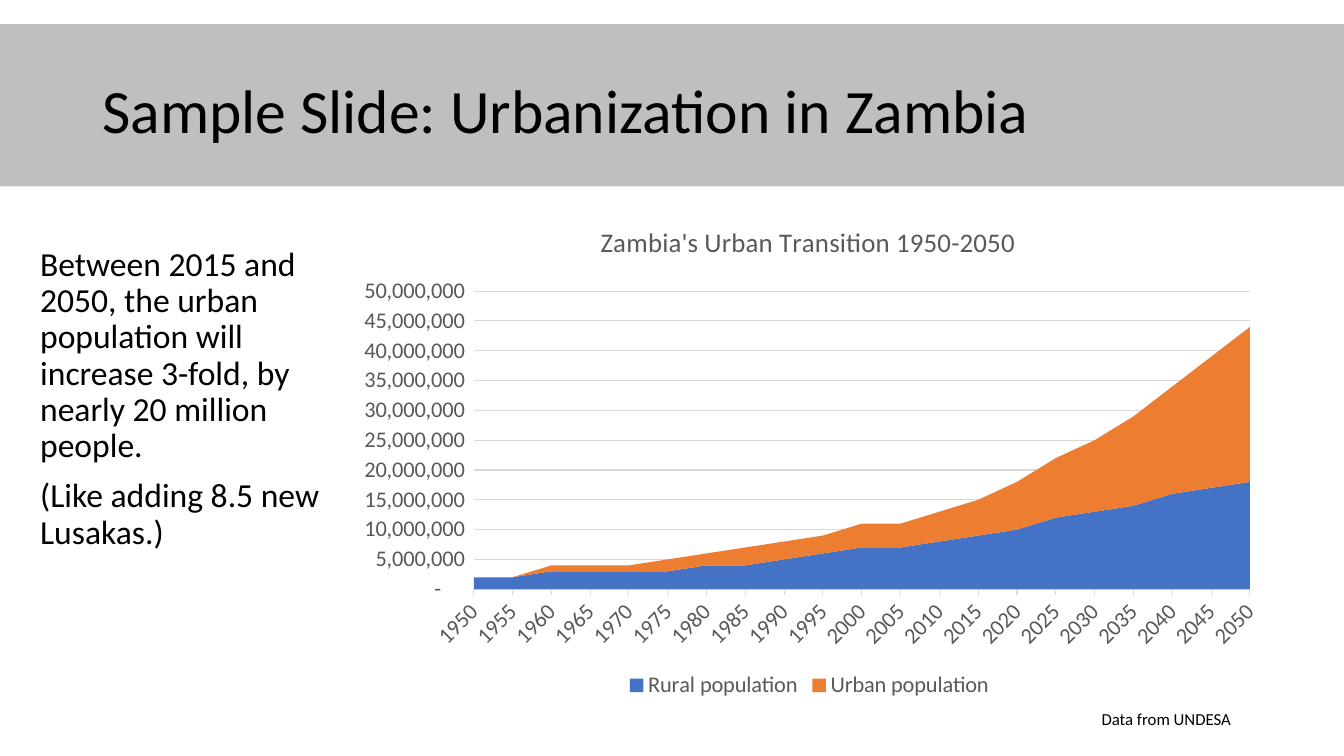
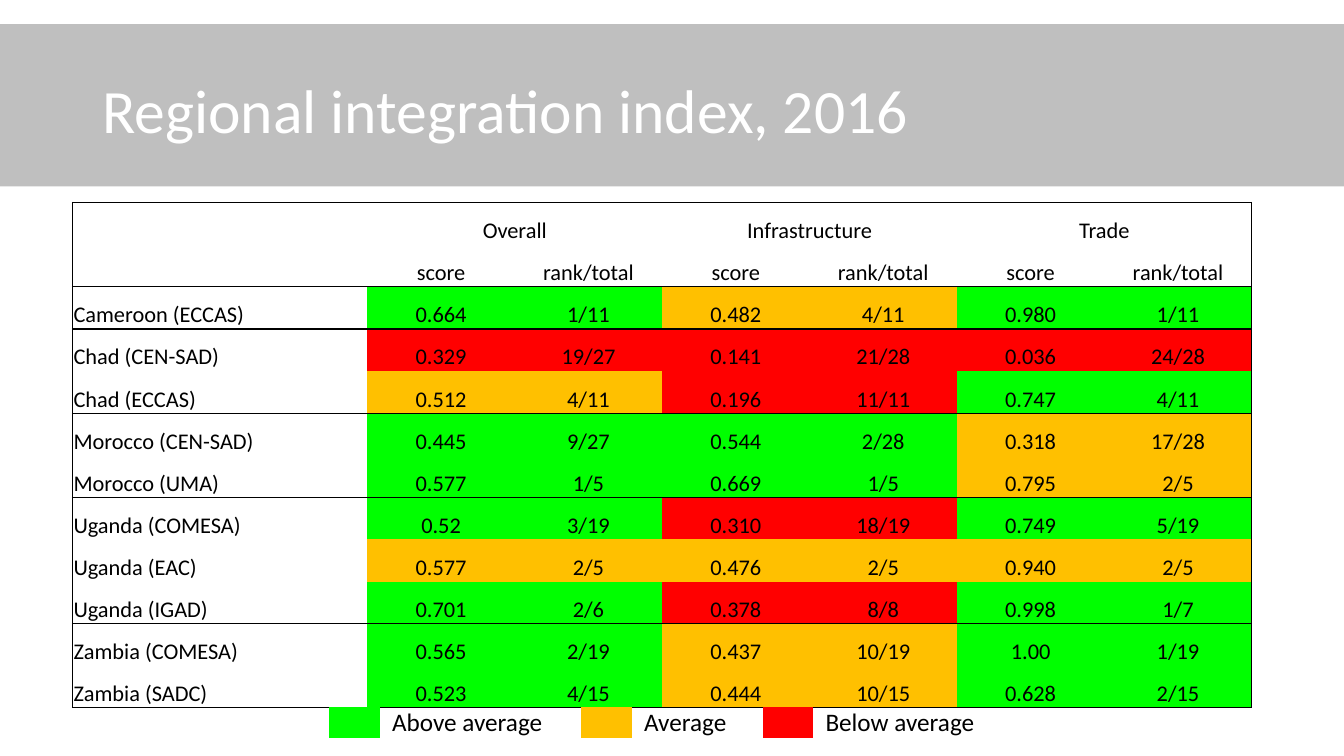
import pptx
import pptx.chart.data
import pptx.dml.color
import pptx.enum.chart
import pptx.enum.shapes
import pptx.enum.text
import pptx.oxml
import pptx.oxml.ns
import pptx.util

Pt = pptx.util.Pt
FONT = "Calibri"
COLORS = {
    "text": "000000", "white": "FFFFFF", "band": "BFBFBF",
    "axis": "595959", "grid": "D9D9D9",
    "rural": "4472C4", "urban": "ED7D31",
    "above": "00FF00", "average": "FFC000", "below": "FF0000",
}
SLIDE = (960, 540)
BAND = (0, 17.28, 960, 115.92)
TITLE = (66, 28.8, 828, 104.4)
ALIGN = pptx.enum.text.PP_ALIGN
ANCHOR = pptx.enum.text.MSO_ANCHOR

YEARS = [str(year) for year in range(1950, 2051, 5)]
MILLIONS = {
    "rural": [2, 2, 3, 3, 3, 3, 4, 4, 5, 6, 7, 7, 8, 9, 10, 12, 13, 14, 16, 17, 18],
    "urban": [0, 0, 1, 1, 1, 2, 2, 3, 3, 3, 4, 4, 5, 6, 8, 10, 12, 15, 18, 22, 26],
}
RATINGS = {"G": "above", "A": "average", "R": "below"}
GROUP_STARTS = (0, 2, 3, 5, 7, 10, 12)
SCORES = [
    ("Cameroon (ECCAS)", "0.664 1/11 0.482 4/11 0.980 1/11", "GAG"),
    ("Chad (CEN-SAD)", "0.329 19/27 0.141 21/28 0.036 24/28", "RRR"),
    ("Chad (ECCAS)", "0.512 4/11 0.196 11/11 0.747 4/11", "ARG"),
    ("Morocco (CEN-SAD)", "0.445 9/27 0.544 2/28 0.318 17/28", "GGA"),
    ("Morocco (UMA)", "0.577 1/5 0.669 1/5 0.795 2/5", "GGA"),
    ("Uganda (COMESA)", "0.52 3/19 0.310 18/19 0.749 5/19", "GRG"),
    ("Uganda (EAC)", "0.577 2/5 0.476 2/5 0.940 2/5", "AAA"),
    ("Uganda (IGAD)", "0.701 2/6 0.378 8/8 0.998 1/7", "GRG"),
    ("Zambia (COMESA)", "0.565 2/19 0.437 10/19 1.00 1/19", "GAG"),
    ("Zambia (SADC)", "0.523 4/15 0.444 10/15 0.628 2/15", "GAG"),
]


def rgb(name):
    """Return the named colour."""
    return pptx.dml.color.RGBColor.from_string(COLORS[name])


def points(box):
    """Turn a box of numbers into lengths."""
    return [Pt(v) for v in box]


def set_font(font, size, color):
    """Give a font its face, size, weight and colour."""
    font.name, font.size, font.bold = FONT, Pt(size), False
    font.color.rgb = rgb(color)


def write(tf, text, size=16, color="text", align=ALIGN.LEFT, spacing=None, before=None):
    """Write each line of text as a formatted paragraph."""
    for i, line in enumerate(text.split("\n")):
        p = tf.paragraphs[0] if i == 0 else tf.add_paragraph()
        p.alignment = align
        if spacing:
            p.line_spacing = spacing
        if before is not None:
            p.space_before = Pt(before)
        r = p.add_run()
        r.text = line
        set_font(r.font, size, color)


def add_text(s, box, text, **fmt):
    """Add a wrapping text box."""
    tf = s.shapes.add_textbox(*points(box)).text_frame
    tf.word_wrap = True
    write(tf, text, **fmt)


def new_slide(prs, text, color):
    """Add a slide with the grey title band."""
    s = prs.slides.add_slide(prs.slide_layouts[5])
    title = s.shapes.title
    band = s.shapes.add_shape(pptx.enum.shapes.MSO_SHAPE.RECTANGLE, *points(BAND))
    band.shadow.inherit = False
    band.fill.solid()
    band.fill.fore_color.rgb = rgb("band")
    band.line.fill.background()
    title._element.addprevious(band._element)
    title.left, title.top, title.width, title.height = points(TITLE)
    tf = title.text_frame
    tf.auto_size = pptx.enum.text.MSO_AUTO_SIZE.NONE
    tf.vertical_anchor = ANCHOR.MIDDLE
    write(tf, text, size=44, color=color, spacing=0.9)
    return s


def set_layout(parent, index, inner=False, **percent):
    """Place a chart part by percentages of the chart."""
    old = parent.find(pptx.oxml.ns.qn("c:layout"))
    if old is not None:
        parent.remove(old)
    target = '<c:layoutTarget val="inner"/>' if inner else ""
    modes = "".join(f'<c:{k}Mode val="edge"/>' for k in "xy")
    values = "".join(f'<c:{k} val="{v / 100:.3f}"/>' for k, v in percent.items())
    parent.insert(index, pptx.oxml.parse_xml(
        f'<c:layout {pptx.oxml.ns.nsdecls("c")}><c:manualLayout>'
        f"{target}{modes}{values}</c:manualLayout></c:layout>"))


def style_axes(chart):
    """Format the year and population axes."""
    tick = pptx.enum.chart.XL_TICK_MARK
    years, people = chart.category_axis, chart.value_axis
    for axis in (years, people):
        set_font(axis.tick_labels.font, 16, "axis")
        axis.minor_tick_mark = tick.NONE
    years.has_major_gridlines = False
    years.major_tick_mark = tick.OUTSIDE
    people.has_major_gridlines = True
    for line in (years.format.line, people.major_gridlines.format.line):
        line.color.rgb = rgb("grid")
        line.width = Pt(0.75)
    years._element.find(pptx.oxml.ns.qn("c:txPr")).find(
        pptx.oxml.ns.qn("a:bodyPr")).set("rot", "-2700000")
    people.major_tick_mark = tick.NONE
    people.format.line.fill.background()
    people.minimum_scale, people.maximum_scale, people.major_unit = 0, 50e6, 5e6
    people.tick_labels.number_format = '_(* #,##0_);_(* \\(#,##0\\);_(* "-"??_);_(@_)'
    people.tick_labels.number_format_is_linked = False
    people._element.find(pptx.oxml.ns.qn("c:crossBetween")).set("val", "midCat")


def population_chart(s, box):
    """Add the stacked area chart of population."""
    data = pptx.chart.data.CategoryChartData()
    data.categories = YEARS
    for key, values in MILLIONS.items():
        data.add_series(f"{key.title()} population", [v * 1000000 for v in values])
    chart = s.shapes.add_chart(
        pptx.enum.chart.XL_CHART_TYPE.AREA_STACKED, *points(box), data).chart
    set_font(chart.font, 16, "text")
    chart.plots[0].vary_by_categories = False
    for series, key in zip(chart.plots[0].series, MILLIONS):
        series.format.fill.solid()
        series.format.fill.fore_color.rgb = rgb(key)
    style_axes(chart)
    chart.has_title = True
    write(chart.chart_title.text_frame, "Zambia's Urban Transition 1950-2050",
          size=19.2, color="axis", align=ALIGN.CENTER)
    set_layout(chart.chart_title._element, 1, x=27.2, y=3.2)
    plot_area = chart._chartSpace.xpath("c:chart/c:plotArea")[0]
    set_layout(plot_area, 0, inner=True, x=14.2, y=17.7, w=82.8, h=59.5)
    chart.has_legend = True
    chart.legend.position = pptx.enum.chart.XL_LEGEND_POSITION.BOTTOM
    chart.legend.include_in_layout = False
    set_font(chart.legend.font, 16, "axis")


def add_table(s, box, rows, widths):
    """Add a plain table with equal rows and the given column widths."""
    table = s.shapes.add_table(rows, len(widths), *points(box)).table
    table.first_row = table.horz_banding = False
    for row in table.rows:
        row.height = Pt(box[3] / rows)
    for column, width in zip(table.columns, widths):
        column.width = Pt(width)
    return table


def style_cell(cell, fill=None, sides="", indent=0.72):
    """Set the margins, borders and fill of a cell."""
    cell.vertical_anchor = ANCHOR.BOTTOM
    cell.margin_left = Pt(indent)
    cell.margin_right = cell.margin_top = Pt(0.72)
    cell.margin_bottom = 0
    tc_pr = cell._tc.get_or_add_tcPr()
    for side in "LRTB":
        paint = (f'<a:solidFill><a:srgbClr val="{COLORS["text"]}"/></a:solidFill>'
                 if side in sides else "<a:noFill/>")
        tc_pr.append(pptx.oxml.parse_xml(
            f'<a:ln{side} {pptx.oxml.ns.nsdecls("a")} w="{Pt(1)}">{paint}</a:ln{side}>'))
    if fill:
        cell.fill.solid()
        cell.fill.fore_color.rgb = rgb(fill)
    else:
        cell.fill.background()


def score_table(s, box):
    """Add the table of integration scores."""
    unit = box[2] / 8
    rows = [["", "Overall", "", "Infrastructure", "", "Trade", ""],
            [""] + ["score", "rank/total"] * 3]
    rows += [[name] + values.split() for name, values, _ in SCORES]
    table = add_table(s, box, len(rows), [2 * unit] + [unit] * 6)
    for c in (1, 3, 5):
        table.cell(0, c).merge(table.cell(0, c + 1))
    for r, row in enumerate(rows):
        edges = "T" * (r in GROUP_STARTS) + "B" * (r + 1 in GROUP_STARTS)
        for c, text in enumerate(row):
            cell = table.cell(r, c)
            sides = edges + "L" * (c == 0) + "R" * (c + cell.span_width == len(row))
            rated = r > 1 and c > 0
            fill = RATINGS[SCORES[r - 2][2][(c - 1) // 2]] if rated else None
            style_cell(cell, fill, sides)
            if text:
                write(cell.text_frame, text, spacing=1.5,
                      align=ALIGN.CENTER if c else ALIGN.LEFT)


def rating_legend(s, box):
    """Add the key to the rating colours."""
    table = add_table(s, box, 1, [36, 144, 36, 93.6, 36, 144])
    for i, key in enumerate(RATINGS.values()):
        swatch, label = table.cell(0, 2 * i), table.cell(0, 2 * i + 1)
        style_cell(swatch, key)
        style_cell(label, indent=8.9)
        text = "Average" if key == "average" else f"{key.title()} average"
        write(label.text_frame, text, size=18)


def urbanization_slide(prs):
    """Build the slide on urbanization."""
    s = new_slide(prs, "Sample Slide: Urbanization in Zambia", "text")
    add_text(s, (21.6, 173, 221.76, 258.48),
             "Between 2015 and 2050, the urban population will increase 3-fold, "
             "by nearly 20 million people.\n(Like adding 8.5 new Lusakas.)",
             size=24, spacing=0.9, before=10)
    population_chart(s, (243.36, 144.72, 669.6, 357.84))
    add_text(s, (779.76, 502.56, 146.88, 21.6), "Data from UNDESA", size=12)


def integration_slide(prs):
    """Build the slide on regional integration."""
    s = new_slide(prs, "Regional integration index, 2016", "white")
    score_table(s, (51.84, 144.72, 842.4, 361.2))
    rating_legend(s, (235.2, 504.72, 489.6, 22.5))


def main():
    """Build and save the presentation."""
    prs = pptx.Presentation()
    prs.slide_width, prs.slide_height = points(SLIDE)
    urbanization_slide(prs)
    integration_slide(prs)
    prs.save("out.pptx")


if __name__ == "__main__":
    main()
